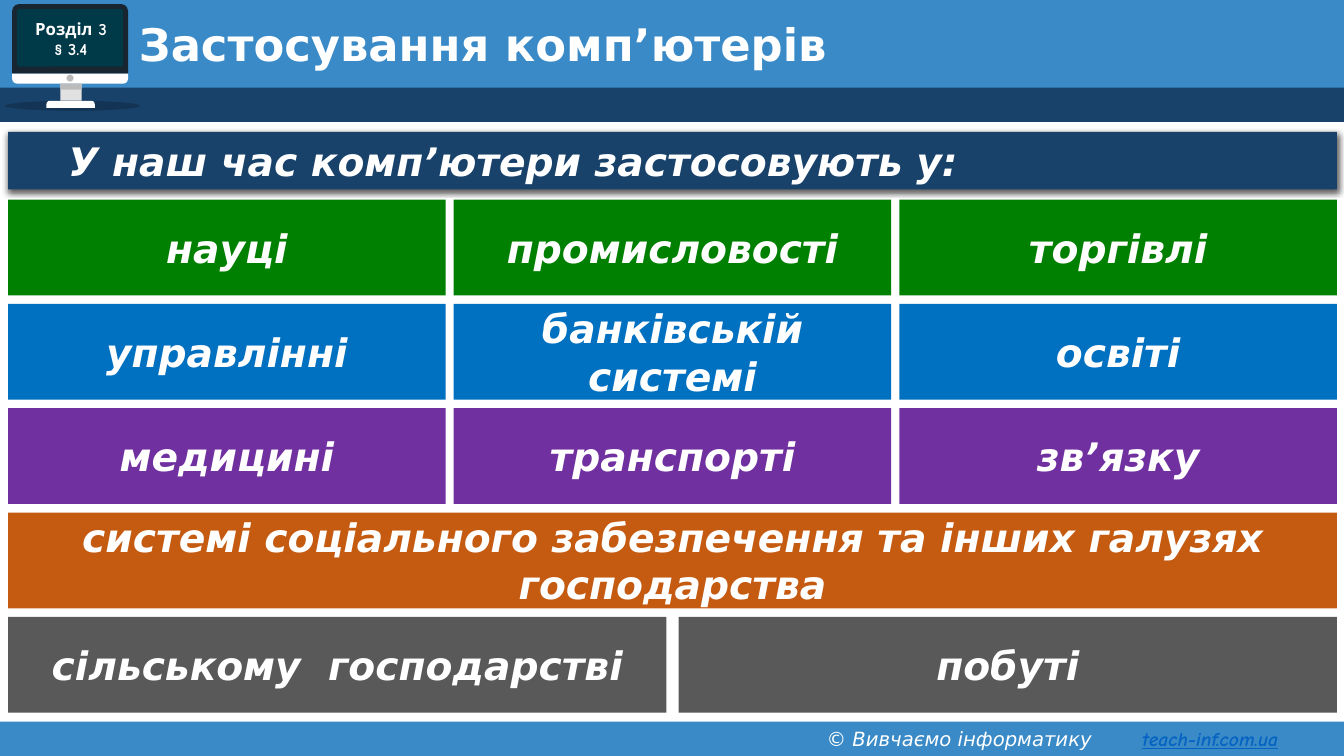
from lxml.etree import SubElement
from pptx import Presentation
from pptx.dml.color import RGBColor
from pptx.enum.shapes import MSO_SHAPE
from pptx.enum.text import MSO_ANCHOR, PP_ALIGN
from pptx.oxml.ns import qn
from pptx.util import Inches, Pt

COLORS = {
    "white": "FFFFFF", "black": "000000", "sky": "398AC7", "navy": "19426B",
    "case": "182632", "screen": "003948", "light": "E1E1E1", "silver": "BBBBBB",
    "link": "0563C1", "green": "008000", "blue": "0070C0", "purple": "7030A0",
    "orange": "C55A11", "gray": "595959",
}
PAGE_WIDTH, PAGE_HEIGHT = 13.33, 7.5
MARGIN, CONTENT_WIDTH = 0.08, 13.18
GRID_TOP, ROW_STEP, CELL_HEIGHT = 1.98, 1.035, 0.95

ROWS = [
    ("green", 0.08, ["науці", "промисловості", "торгівлі"]),
    ("blue", 0.08, ["управлінні", "банківській системі", "освіті"]),
    ("purple", 0.08, ["медицині", "транспорті", "зв’язку"]),
    ("orange", 0, ["системі соціального забезпечення та інших галузях господарства"]),
    ("gray", 0.12, ["сільському  господарстві", "побуті"]),
]


class SlideBuilder:
    font = "DejaVu Sans"
    accent_font = "Comic Neue"

    def __init__(self, page):
        self.page = page

    def shape(self, kind, left, top, width, height, color, corner=None, opacity=None):
        shape = self.page.shapes.add_shape(
            kind, Inches(left), Inches(top), Inches(width), Inches(height))
        shape.shadow.inherit = False
        shape.fill.solid()
        shape.fill.fore_color.rgb = RGBColor.from_string(COLORS[color])
        shape.line.fill.background()
        if corner is not None:
            shape.adjustments[0] = corner
        if opacity is not None:
            fill_color = shape.fill._xPr.find(".//" + qn("a:srgbClr"))
            SubElement(fill_color, qn("a:alpha"), val=str(opacity * 1000))
        return shape

    def rectangle(self, left, top, width, height, color):
        return self.shape(MSO_SHAPE.RECTANGLE, left, top, width, height, color)

    def ellipse(self, left, top, width, height, color, opacity=None):
        return self.shape(MSO_SHAPE.OVAL, left, top, width, height, color, opacity=opacity)

    def text_box(self, left, top, width, height, anchor=MSO_ANCHOR.TOP):
        box = self.page.shapes.add_textbox(
            Inches(left), Inches(top), Inches(width), Inches(height))
        box.text_frame.word_wrap = True
        box.text_frame.vertical_anchor = anchor
        return box

    def span(self, para, text, size, bold=False, italic=False, color="white", font=None):
        span = para.add_run()
        span.text = text
        span.font.name = font or self.font
        span.font.size = Pt(size)
        span.font.bold = bold
        span.font.italic = italic
        span.font.color.rgb = RGBColor.from_string(COLORS[color])
        return span

    def shadow(self, shape):
        effects = shape._element.spPr.find(qn("a:effectLst"))
        outer = SubElement(effects, qn("a:outerShdw"), blurRad=str(Pt(4.5)),
                           dist=str(Pt(1.5)), dir="5400000", algn="ctr", rotWithShape="0")
        shade = SubElement(outer, qn("a:srgbClr"), val=COLORS["black"])
        SubElement(shade, qn("a:alpha"), val="63000")

    def monitor(self):
        top_rounded = MSO_SHAPE.ROUND_2_SAME_RECTANGLE
        self.ellipse(0.05, 1, 1.34, 0.1, "black", opacity=20)
        self.shape(top_rounded, 0.12, 0.04, 1.15, 0.69, "case", corner=0.1)
        chin = self.shape(top_rounded, 0.12, 0.73, 1.15, 0.1, "white", corner=0.5)
        chin.rotation = 180
        self.rectangle(0.6, 0.83, 0.21, 0.17, "light")
        self.rectangle(0.6, 0.83, 0.21, 0.06, "silver")
        self.shape(top_rounded, 0.46, 1, 0.48, 0.07, "white", corner=0.5)
        self.ellipse(0.66, 0.74, 0.07, 0.07, "silver")
        self.shape(MSO_SHAPE.ROUNDED_RECTANGLE, 0.17, 0.09, 1.05, 0.57, "screen", corner=0.036)
        frame = self.text_box(0.13, 0.09, 1.15, 0.59, MSO_ANCHOR.MIDDLE).text_frame
        for index, text in enumerate(["Розділ 3", "§ 3.4"]):
            para = frame.add_paragraph() if index else frame.paragraphs[0]
            para.alignment = PP_ALIGN.CENTER
            self.span(para, text, 12, bold=True, font=self.accent_font)

    def title(self, text):
        box = self.text_box(1.28, 0.18, 11.72, 0.58, MSO_ANCHOR.MIDDLE)
        para = box.text_frame.paragraphs[0]
        para.line_spacing = 0.9
        self.span(para, text, 32, bold=True)

    def footer(self, copyright_line, address):
        self.rectangle(0, 7.16, PAGE_WIDTH, 0.34, "sky")
        para = self.text_box(8.1, 7.16, 5.23, 0.34).text_frame.paragraphs[0]
        tabs = SubElement(para._p.get_or_add_pPr(), qn("a:tabLst"))
        SubElement(tabs, qn("a:tab"), pos=str(Inches(3.13)), algn="l")
        self.span(para, copyright_line + "\t", 14, italic=True)
        link = self.span(para, address, 14, bold=True, italic=True,
                         color="link", font=self.accent_font)
        link.font.underline = True

    def banner(self, text):
        box = self.rectangle(MARGIN, 1.31, CONTENT_WIDTH, 0.57, "navy")
        self.shadow(box)
        box.text_frame.word_wrap = True
        box.text_frame.vertical_anchor = MSO_ANCHOR.TOP
        para = box.text_frame.paragraphs[0]
        para.alignment = PP_ALIGN.JUSTIFY
        para._p.get_or_add_pPr().set("indent", str(Inches(0.5)))
        self.span(para, text, 28, bold=True, italic=True)

    def tile(self, left, top, width, color, text):
        box = self.rectangle(left, top, width, CELL_HEIGHT, color)
        box.text_frame.word_wrap = True
        box.text_frame.vertical_anchor = MSO_ANCHOR.MIDDLE
        para = box.text_frame.paragraphs[0]
        para.alignment = PP_ALIGN.CENTER
        self.span(para, text, 28, bold=True, italic=True)

    def tile_row(self, top, color, gap, labels):
        width = (CONTENT_WIDTH - gap * (len(labels) - 1)) / len(labels)
        for column, label in enumerate(labels):
            self.tile(MARGIN + column * (width + gap), top, width, color, label)


def main():
    deck = Presentation()
    deck.slide_width = Inches(PAGE_WIDTH)
    deck.slide_height = Inches(PAGE_HEIGHT)
    builder = SlideBuilder(deck.slides.add_slide(deck.slide_layouts[6]))
    builder.rectangle(0, 0, PAGE_WIDTH, 0.91, "sky")
    builder.rectangle(0, 0.87, PAGE_WIDTH, 0.34, "navy")
    builder.monitor()
    builder.footer("© Вивчаємо інформатику", "teach-inf.com.ua")
    builder.title("Застосування комп’ютерів")
    builder.banner("У наш час комп’ютери застосовують у:")
    for index, (color, gap, labels) in enumerate(ROWS):
        builder.tile_row(GRID_TOP + index * ROW_STEP, color, gap, labels)
    deck.save("out.pptx")


if __name__ == "__main__":
    main()
